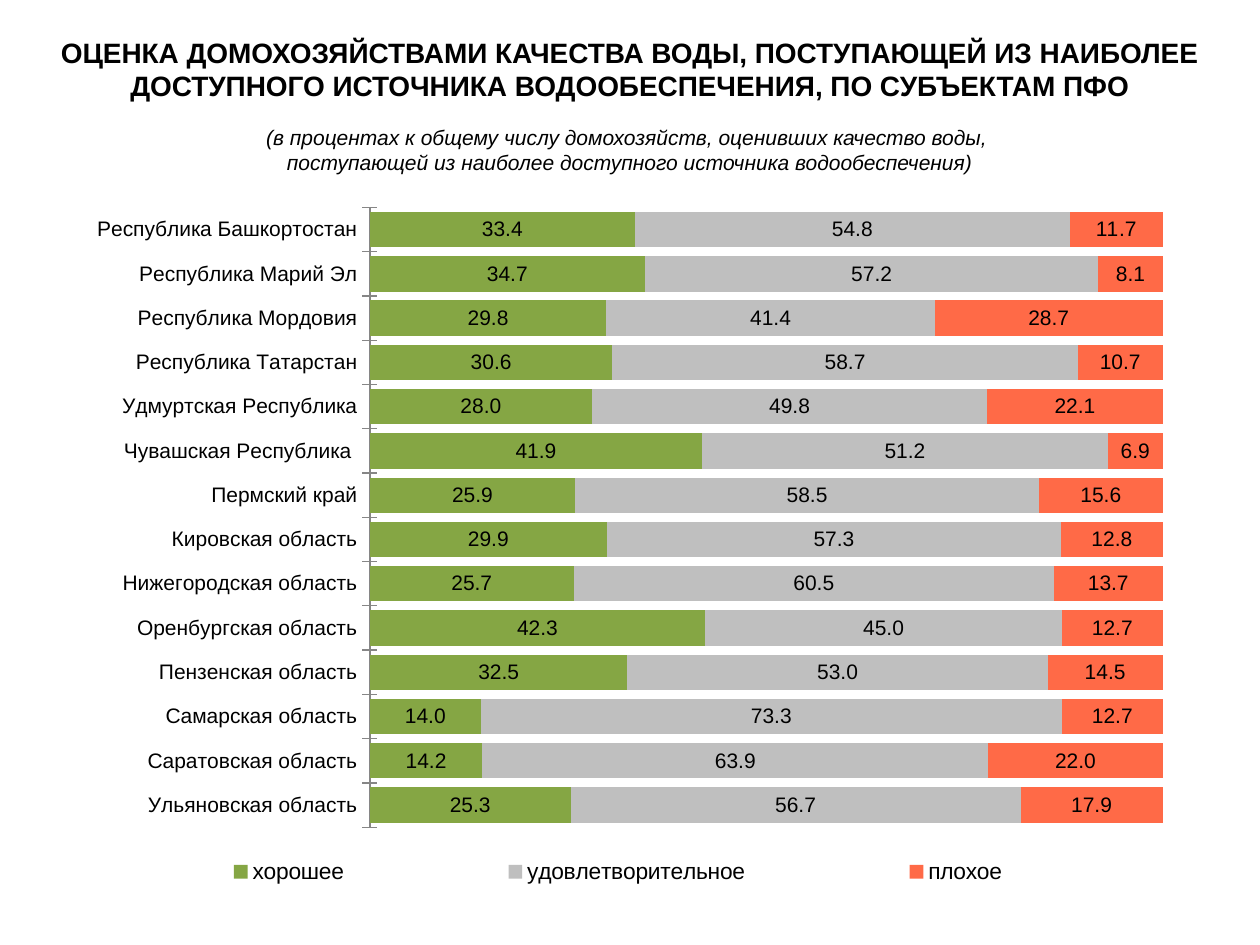
from lxml.etree import SubElement
from pptx import Presentation
from pptx.chart.data import CategoryChartData
from pptx.dml.color import RGBColor
from pptx.enum.chart import XL_CHART_TYPE as ChartType
from pptx.enum.chart import XL_LABEL_POSITION as LabelPosition
from pptx.enum.chart import XL_LEGEND_POSITION as LegendPosition
from pptx.enum.chart import XL_TICK_MARK as TickMark
from pptx.enum.text import MSO_AUTO_SIZE as AutoSize
from pptx.enum.text import PP_ALIGN as Align
from pptx.oxml.ns import qn
from pptx.util import Inches, Pt

COLORS = {
    "text": "000000",
    "axis": "868686",
    "good": "85A644",
    "fair": "BFBFBF",
    "bad": "FF6A47",
}
FONT = "Arial"

TITLE = ("ОЦЕНКА ДОМОХОЗЯЙСТВАМИ КАЧЕСТВА ВОДЫ, ПОСТУПАЮЩЕЙ ИЗ НАИБОЛЕЕ "
         "ДОСТУПНОГО ИСТОЧНИКА ВОДООБЕСПЕЧЕНИЯ, ПО СУБЪЕКТАМ ПФО")
SUBTITLE = [
    "(в процентах к общему числу домохозяйств, оценивших качество воды, ",
    "поступающей из наиболее доступного источника водообеспечения)",
]
REGION_RATINGS = [
    ("Республика Башкортостан", 33.4, 54.8, 11.7),
    ("Республика Марий Эл", 34.7, 57.2, 8.1),
    ("Республика Мордовия", 29.8, 41.4, 28.7),
    ("Республика Татарстан", 30.6, 58.7, 10.7),
    ("Удмуртская Республика", 28.0, 49.8, 22.1),
    ("Чувашская Республика ", 41.9, 51.2, 6.9),
    ("Пермский край", 25.9, 58.5, 15.6),
    ("Кировская область", 29.9, 57.3, 12.8),
    ("Нижегородская область", 25.7, 60.5, 13.7),
    ("Оренбургская область", 42.3, 45.0, 12.7),
    ("Пензенская область", 32.5, 53.0, 14.5),
    ("Самарская область", 14.0, 73.3, 12.7),
    ("Саратовская область", 14.2, 63.9, 22.0),
    ("Ульяновская область", 25.3, 56.7, 17.9),
]
RATINGS = [("хорошее ", "good"), ("удовлетворительное ", "fair"),
           ("плохое ", "bad")]


def rgb(key):
    return RGBColor.from_string(COLORS[key])


def style_font(font, size, bold=False, italic=False):
    font.name = FONT
    font.size = Pt(size)
    font.bold = bold
    font.italic = italic
    font.color.rgb = rgb("text")


def add_heading(slide, top, height, lines, size, **style):
    """Add centred lines across the full slide width."""
    box = slide.shapes.add_textbox(0, Inches(top), Inches(10), Inches(height))
    frame = box.text_frame
    frame.word_wrap = True
    frame.auto_size = AutoSize.SHAPE_TO_FIT_TEXT
    for index, line in enumerate(lines):
        paragraph = frame.add_paragraph() if index else frame.paragraphs[0]
        paragraph.alignment = Align.CENTER
        run = paragraph.add_run()
        run.text = line
        style_font(run.font, size, **style)


def set_layout(parent, index, x, y, w, h, inner=False):
    """Place a chart part by fractions of the chart's size."""
    for old in parent.findall(qn("c:layout")):
        parent.remove(old)
    layout = SubElement(parent, qn("c:layout"))
    parent.insert(index, layout)
    manual = SubElement(layout, qn("c:manualLayout"))
    settings = [("xMode", "edge"), ("yMode", "edge"),
                ("x", x), ("y", y), ("w", w), ("h", h)]
    if inner:
        settings.insert(0, ("layoutTarget", "inner"))
    for tag, value in settings:
        SubElement(manual, qn(f"c:{tag}")).set("val", str(value))


def style_axes(chart):
    regions = chart.category_axis
    regions.reverse_order = True
    regions.major_tick_mark = TickMark.CROSS
    regions.has_major_gridlines = False
    regions.format.line.color.rgb = rgb("axis")
    regions.format.line.width = Pt(0.75)
    style_font(regions.tick_labels.font, 12)
    shares = chart.value_axis
    shares.has_major_gridlines = False
    shares.visible = False


def style_series(plot):
    plot.gap_width = 25
    plot.overlap = 100
    plot.vary_by_categories = False
    for series, (_, color) in zip(plot.series, RATINGS):
        series.format.fill.solid()
        series.format.fill.fore_color.rgb = rgb(color)
        labels = series.data_labels
        labels.show_value = True
        labels.number_format = "0.0"
        labels.number_format_is_linked = False
        labels.position = LabelPosition.CENTER
        style_font(labels.font, 12)


def add_ratings_chart(slide):
    data = CategoryChartData(number_format="0.0")
    regions, *shares = zip(*REGION_RATINGS)
    data.categories = regions
    for (rating, _), values in zip(RATINGS, shares):
        data.add_series(rating, values)
    chart = slide.shapes.add_chart(
        ChartType.BAR_STACKED_100, Inches(0.39), Inches(1.41),
        Inches(8.9), Inches(5.8), data).chart
    chart.has_title = False
    chart.font.name = "Calibri"
    chart.font.size = Pt(18)
    style_axes(chart)
    style_series(chart.plots[0])
    plot_area = chart.category_axis._element.getparent()
    set_layout(plot_area, 0, 0.286, 0.041, 0.707, 0.848, inner=True)

    chart.has_legend = True
    legend = chart.legend
    legend.position = LegendPosition.BOTTOM
    legend.include_in_layout = False
    style_font(legend.font, 13)
    set_layout(legend._element, 1, 0.03, 0.91, 0.96, 0.08)


def main():
    presentation = Presentation()
    presentation.slide_width = Inches(10)
    presentation.slide_height = Inches(7.5)
    slide = presentation.slides.add_slide(presentation.slide_layouts[6])
    add_ratings_chart(slide)
    add_heading(slide, 0.23, 0.64, [TITLE], 16, bold=True)
    add_heading(slide, 0.94, 0.5, SUBTITLE, 12, italic=True)
    presentation.save("out.pptx")


if __name__ == "__main__":
    main()
